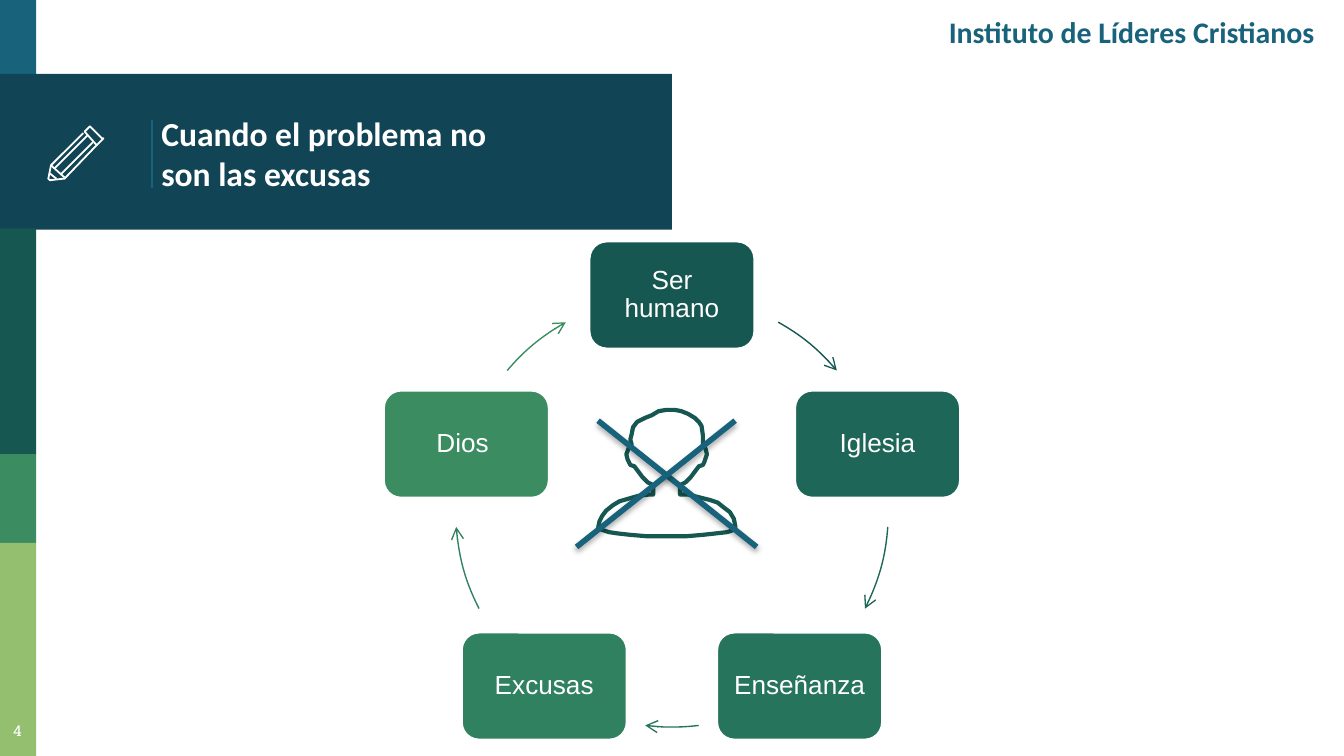
from math import ceil, cos, radians, sin
from typing import NamedTuple

from lxml.etree import SubElement
from pptx import Presentation
from pptx.dml.color import RGBColor
from pptx.enum.shapes import MSO_CONNECTOR, MSO_SHAPE
from pptx.enum.text import MSO_ANCHOR, MSO_AUTO_SIZE, PP_ALIGN
from pptx.oxml.ns import qn
from pptx.util import Pt

EMU_PER_PX = 9144  # 100 px to the inch

COLORS = {
    "white": "FFFFFF", "black": "000000", "blue": "18637B", "navy": "114454",
    "forest": "165751", "pine": "1E6657", "teal": "26745C", "fern": "30815F",
    "green": "3B8D61", "lime": "94BF6E",
}


class Box(NamedTuple):
    left: int
    top: int
    width: int
    height: int


class Step(NamedTuple):
    """A node of the cycle and the angles of the arrow that leaves it."""
    label: str
    color: str
    arrow_start: float
    arrow_end: float


class Outline(NamedTuple):
    points: list
    closed: bool = False


BANDS = [
    (Box(0, 0, 27, 58), "blue"),
    (Box(0, 55, 500, 116), "navy"),
    (Box(0, 170, 27, 168), "forest"),
    (Box(0, 338, 27, 66), "green"),
    (Box(0, 404, 27, 159), "lime"),
]

CYCLE_CENTER = (500, 380)
CYCLE_RADIUS = 161
NODE_WIDTH, NODE_HEIGHT = 124, 81
STEPS = [
    Step("Ser humano", "forest", 299.4, 319.6),
    Step("Iglesia", "pine", 4.3, 26.9),
    Step("Enseñanza", "teal", 82.9, 97.1),
    Step("Excusas", "fern", 153.1, 175.7),
    Step("Dios ", "green", 220.4, 240.6),
]

PENCIL = [
    Outline([(76, 103), (68, 95), (67, 94), (66, 95), (63, 98), (72, 108),
             (76, 104), (77, 103)], True),
    Outline([(69, 106), (45, 130)]),
    Outline([(62, 99), (38, 123), (36, 133), (37, 134), (38, 134), (47, 133),
             (48, 133), (72, 108)]),
    Outline([(41, 125), (65, 101)]),
    Outline([(42, 133), (37, 129)]),
    Outline([(38, 123), (48, 132)]),
]

PERSON = Outline([
    (508, 368), (506, 368), (506, 361), (510, 359), (514, 355), (517, 351),
    (520, 347), (523, 346), (524, 344), (525, 341), (526, 338), (525, 334),
    (523, 331), (523, 324), (522, 317), (520, 314), (517, 311), (512, 308),
    (507, 306), (502, 305), (496, 305), (490, 306), (485, 309), (480, 311),
    (474, 314), (471, 318), (470, 323), (469, 327), (470, 331), (468, 333),
    (466, 338), (467, 342), (469, 346), (472, 347), (475, 351), (478, 355),
    (482, 359), (486, 361), (486, 368), (483, 368), (475, 369), (468, 371),
    (461, 373), (456, 376), (451, 380), (448, 384), (446, 388), (445, 393),
    (447, 394), (453, 396), (460, 397), (469, 398), (481, 399), (496, 399),
    (511, 399), (523, 398), (532, 397), (541, 396), (547, 394), (547, 391),
    (546, 386), (543, 381), (539, 378), (534, 374), (528, 372), (520, 370),
    (512, 368),
], True)


def px(value: int) -> int:
    return value * EMU_PER_PX


def rgb(name: str) -> RGBColor:
    return RGBColor.from_string(COLORS[name])


def set_line(shape, color: str, width: float) -> None:
    shape.line.color.rgb = rgb(color)
    shape.line.width = Pt(width)


def write(shape, text: str, *, size: float, font: str = "Calibri",
          color: str = "white", bold: bool = False, align=PP_ALIGN.LEFT,
          anchor=MSO_ANCHOR.MIDDLE, inset_x: int = 10, inset_y: int = 10,
          spacing: float = 1.0) -> None:
    frame = shape.text_frame
    frame.word_wrap = True
    frame.auto_size = MSO_AUTO_SIZE.NONE
    frame.vertical_anchor = anchor
    frame.margin_left = frame.margin_right = px(inset_x)
    frame.margin_top = frame.margin_bottom = px(inset_y)
    paragraph = frame.paragraphs[0]
    paragraph.text = text
    paragraph.alignment = align
    paragraph.line_spacing = spacing
    paragraph.space_before = Pt(0)
    for run in paragraph.runs:
        run.font.size = Pt(size)
        run.font.name = font
        run.font.bold = bold
        run.font.color.rgb = rgb(color)


def add_preset(slide, kind, box: Box, fill: str | None = None):
    shape = slide.shapes.add_shape(kind, *map(px, box))
    shape.shadow.inherit = False
    if fill:
        shape.fill.solid()
        shape.fill.fore_color.rgb = rgb(fill)
    else:
        shape.fill.background()
    shape.line.fill.background()
    return shape


def add_text(slide, box: Box, text: str, **text_format) -> None:
    write(slide.shapes.add_textbox(*map(px, box)), text, **text_format)


def add_outline(slide, outline: Outline, color: str, width: float) -> None:
    start, *others = outline.points
    builder = slide.shapes.build_freeform(*start, scale=EMU_PER_PX)
    builder.add_line_segments(others, close=outline.closed)
    shape = builder.convert_to_shape()
    shape.shadow.inherit = False
    shape.fill.background()
    set_line(shape, color, width)


def add_straight(slide, start: tuple, end: tuple, width: float,
                 shadow: bool = False) -> None:
    line = slide.shapes.add_connector(MSO_CONNECTOR.STRAIGHT, *map(px, start + end))
    set_line(line, "blue", width)
    effects = SubElement(line._element.spPr, qn("a:effectLst"))
    if shadow:
        outer = SubElement(effects, qn("a:outerShdw"), blurRad="40000",
                           dist="23000", dir="5400000", rotWithShape="0")
        tint = SubElement(outer, qn("a:srgbClr"), val=COLORS["black"])
        SubElement(tint, qn("a:alpha"), val="35000")


def add_step(slide, index: int, step: Step) -> None:
    angle = radians(360 / len(STEPS) * index - 90)
    center_x, center_y = CYCLE_CENTER
    left = round(center_x + CYCLE_RADIUS * cos(angle) - NODE_WIDTH / 2)
    top = ceil(center_y + CYCLE_RADIUS * sin(angle) - NODE_HEIGHT / 2)
    node = add_preset(slide, MSO_SHAPE.ROUNDED_RECTANGLE,
                      Box(left, top, NODE_WIDTH, NODE_HEIGHT), step.color)
    set_line(node, "white", 2)
    write(node, step.label, size=14, font="Arial", align=PP_ALIGN.CENTER,
          inset_x=6, inset_y=6, spacing=0.9)

    diameter = 2 * CYCLE_RADIUS
    arrow = add_preset(slide, MSO_SHAPE.ARC,
                       Box(center_x - CYCLE_RADIUS, center_y - CYCLE_RADIUS,
                           diameter, diameter))
    # Adjustments count in units of 100000, angles in 60000ths of a degree.
    arrow.adjustments[0] = step.arrow_start * 0.6
    arrow.adjustments[1] = step.arrow_end * 0.6
    set_line(arrow, step.color, 0.75)
    SubElement(arrow.line._get_or_add_ln(), qn("a:tailEnd"), type="arrow")


def main() -> None:
    presentation = Presentation()
    presentation.slide_width = px(1000)
    presentation.slide_height = px(1000) * 9 // 16
    slide = presentation.slides.add_slide(presentation.slide_layouts[5])

    for box, color in BANDS:
        add_preset(slide, MSO_SHAPE.RECTANGLE, box, color)
    add_straight(slide, (113, 89), (113, 140), 0.75)

    title = slide.shapes.title
    title.left, title.top, title.width, title.height = map(px, Box(110, 58, 422, 112))
    write(title, "Cuando el problema no \vson las excusas", size=18, bold=True)
    slide.shapes._spTree.append(title._element)  # in front of the bands

    add_text(slide, Box(-6, 527, 38, 35), "4", size=8, font="Roboto Slab",
             align=PP_ALIGN.CENTER, anchor=MSO_ANCHOR.TOP)
    add_text(slide, Box(618, 6, 370, 61), "Instituto de Líderes Cristianos",
             size=16, color="blue", bold=True, align=PP_ALIGN.RIGHT,
             anchor=MSO_ANCHOR.TOP, inset_y=4)

    for outline in PENCIL:
        add_outline(slide, outline, "white", 0.96)
    for index, step in enumerate(STEPS):
        add_step(slide, index, step)

    add_outline(slide, PERSON, "forest", 2.25)
    add_straight(slide, (445, 313), (563, 407), 3, shadow=True)
    add_straight(slide, (547, 313), (429, 407), 3, shadow=True)

    presentation.save("out.pptx")


if __name__ == "__main__":
    main()
